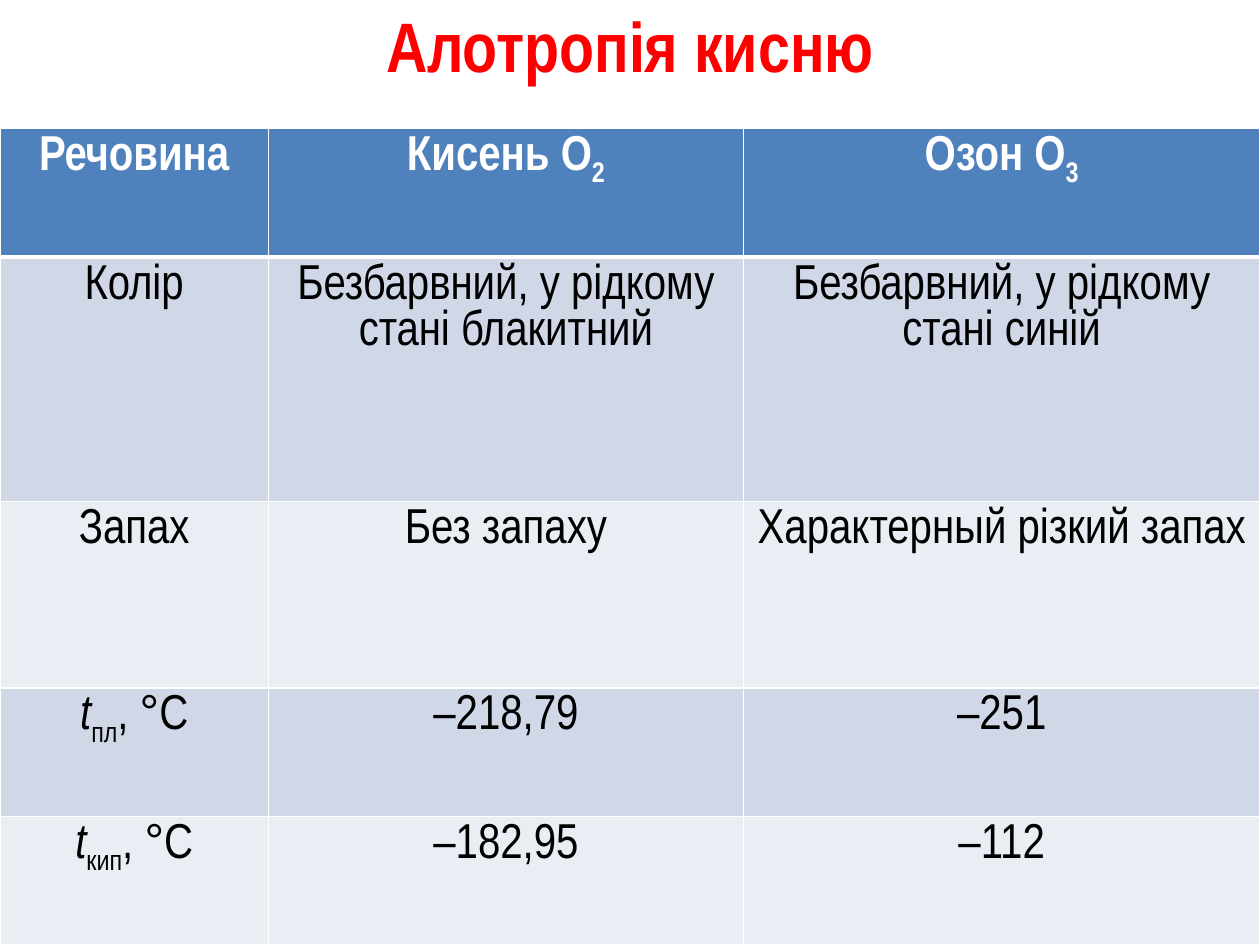
from typing import NamedTuple

from lxml import etree
from pptx import Presentation
from pptx.dml.color import RGBColor
from pptx.enum.text import MSO_ANCHOR, MSO_AUTO_SIZE, PP_ALIGN
from pptx.oxml.ns import qn
from pptx.util import Inches, Pt

CENTER = PP_ALIGN.CENTER
MIDDLE = MSO_ANCHOR.MIDDLE
NO_AUTOFIT = MSO_AUTO_SIZE.NONE

RED = RGBColor(0xFF, 0x00, 0x00)
WHITE = RGBColor(0xFF, 0xFF, 0xFF)
BLACK = RGBColor(0x00, 0x00, 0x00)
HEADER_BLUE = RGBColor(0x4F, 0x81, 0xBD)
BANDS = (RGBColor(0xD0, 0xD8, 0xE8), RGBColor(0xE9, 0xED, 0xF4))
FONT = "Arial Narrow"


class Part(NamedTuple):
    text: str
    italic: bool = False
    subscript: bool = False


def temperature(index: str) -> list[Part]:
    return [Part("t", italic=True), Part(index, subscript=True), Part(", °С")]


def substance(name: str, atoms: str) -> list[Part]:
    return [Part(name), Part(atoms, subscript=True)]


COLUMN_WIDTHS = (2.13, 3.77, 4.1)
ROW_HEIGHTS = (1.02, 1.94, 1.48, 1.02, 1.02)
ROWS = [
    [[Part("Речовина")], substance("Кисень О", "2"), substance("Озон О", "3")],
    [[Part("Колір")], [Part("Безбарвний, у рідкому стані блакитний")],
     [Part("Безбарвний, у рідкому стані синій")]],
    [[Part("Запах")], [Part("Без запаху")], [Part("Характерный різкий запах")]],
    [temperature("пл"), [Part("–218,79")], [Part("–251")]],
    [temperature("кип"), [Part("–182,95")], [Part("–112")]],
]


def add_run(p, part: Part, size: int, color: RGBColor, bold: bool) -> None:
    r = p.add_run()
    r.text = part.text
    values = {"name": FONT, "size": Pt(size), "bold": bold, "italic": part.italic}
    for name, value in values.items():
        setattr(r.font, name, value)
    r.font.color.rgb = color
    if part.subscript:
        r.font._element.set("baseline", "-25000")


def set_borders(cell, bottom: int) -> None:
    tc_pr = cell._tc.get_or_add_tcPr()
    widths = {"a:lnL": 1, "a:lnR": 1, "a:lnT": 1, "a:lnB": bottom}
    # Border lines come before the fill in the cell properties
    for i, (tag, width) in enumerate(widths.items()):
        ln = etree.Element(qn(tag), w=str(Pt(width)))
        fill = etree.SubElement(ln, qn("a:solidFill"))
        etree.SubElement(fill, qn("a:srgbClr"), val=str(WHITE))
        tc_pr.insert(i, ln)


def fill_cell(cell, parts: list[Part], row: int) -> None:
    header = row == 0
    cell.fill.solid()
    cell.fill.fore_color.rgb = HEADER_BLUE if header else BANDS[(row - 1) % 2]
    set_borders(cell, 3 if header else 1)
    p = cell.text_frame.paragraphs[0]
    p.alignment = CENTER
    for part in parts:
        add_run(p, part, 28, WHITE if header else BLACK, header)


def add_title(s, text: str) -> None:
    title = s.shapes.title
    box = {"left": 0.5, "top": 0.3, "width": 9, "height": 0.79}
    for name, value in box.items():
        setattr(title, name, Inches(value))
    tf = title.text_frame
    # The deep bottom inset lifts the heading away from the table
    values = {"word_wrap": True, "auto_size": NO_AUTOFIT, "vertical_anchor": MIDDLE,
              "margin_top": Inches(0), "margin_bottom": Inches(0.68)}
    for name, value in values.items():
        setattr(tf, name, value)
    p = tf.paragraphs[0]
    p.alignment = CENTER
    add_run(p, Part(text), 40, RED, True)


def add_properties_table(s) -> None:
    table = s.shapes.add_table(
        len(ROWS), len(COLUMN_WIDTHS), Inches(0), Inches(1.02),
        Inches(sum(COLUMN_WIDTHS)), Inches(sum(ROW_HEIGHTS))).table
    for column, width in zip(table.columns, COLUMN_WIDTHS):
        column.width = Inches(width)
    for i, (row, height) in enumerate(zip(table.rows, ROW_HEIGHTS)):
        row.height = Inches(height)
        for cell, parts in zip(row.cells, ROWS[i]):
            fill_cell(cell, parts, i)


def main() -> None:
    prs = Presentation()
    prs.slide_width, prs.slide_height = Inches(10), Inches(7.5)
    s = prs.slides.add_slide(prs.slide_layouts.get_by_name("Title Only"))
    add_title(s, "Алотропія кисню")
    add_properties_table(s)
    prs.save("out.pptx")


if __name__ == "__main__":
    main()
